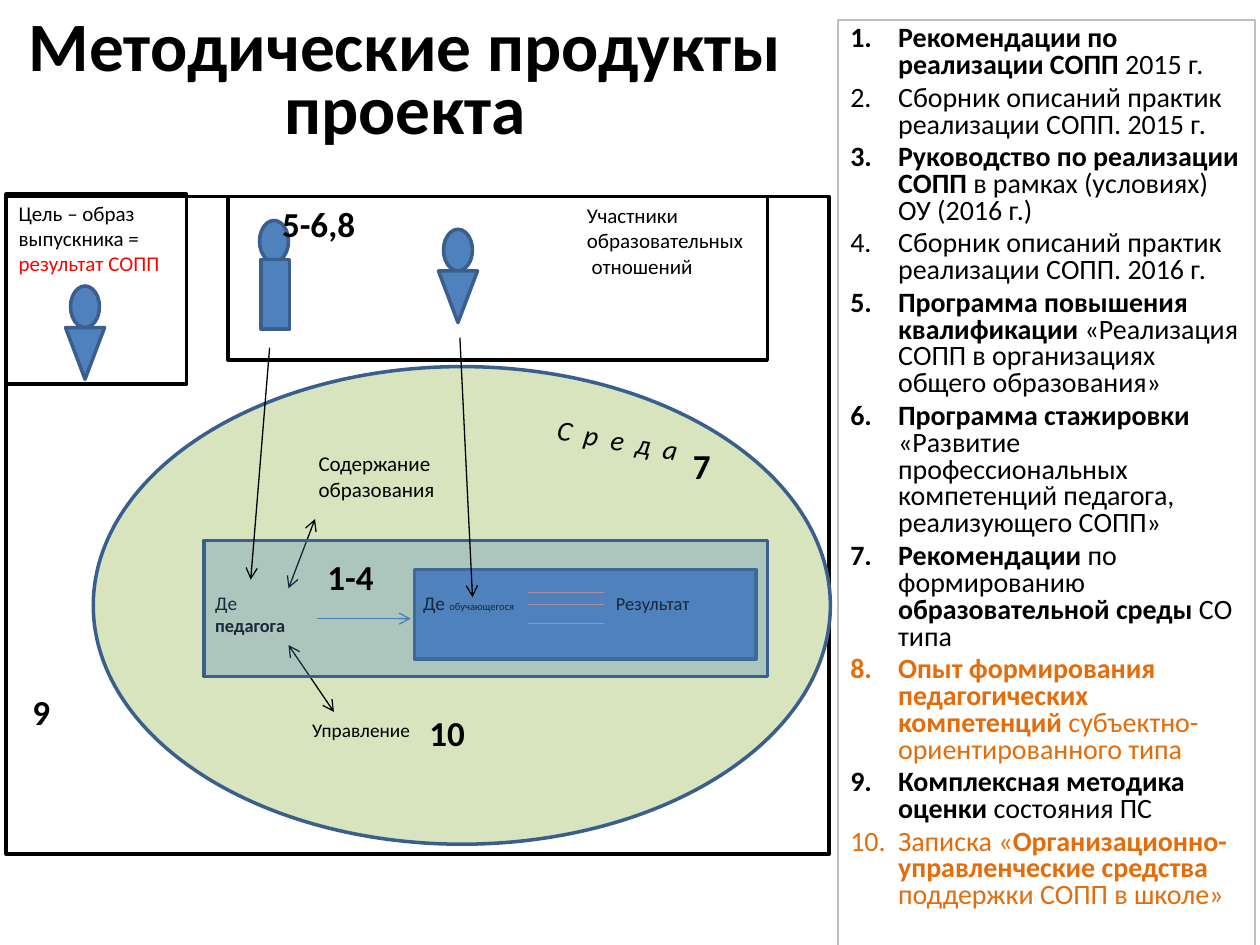
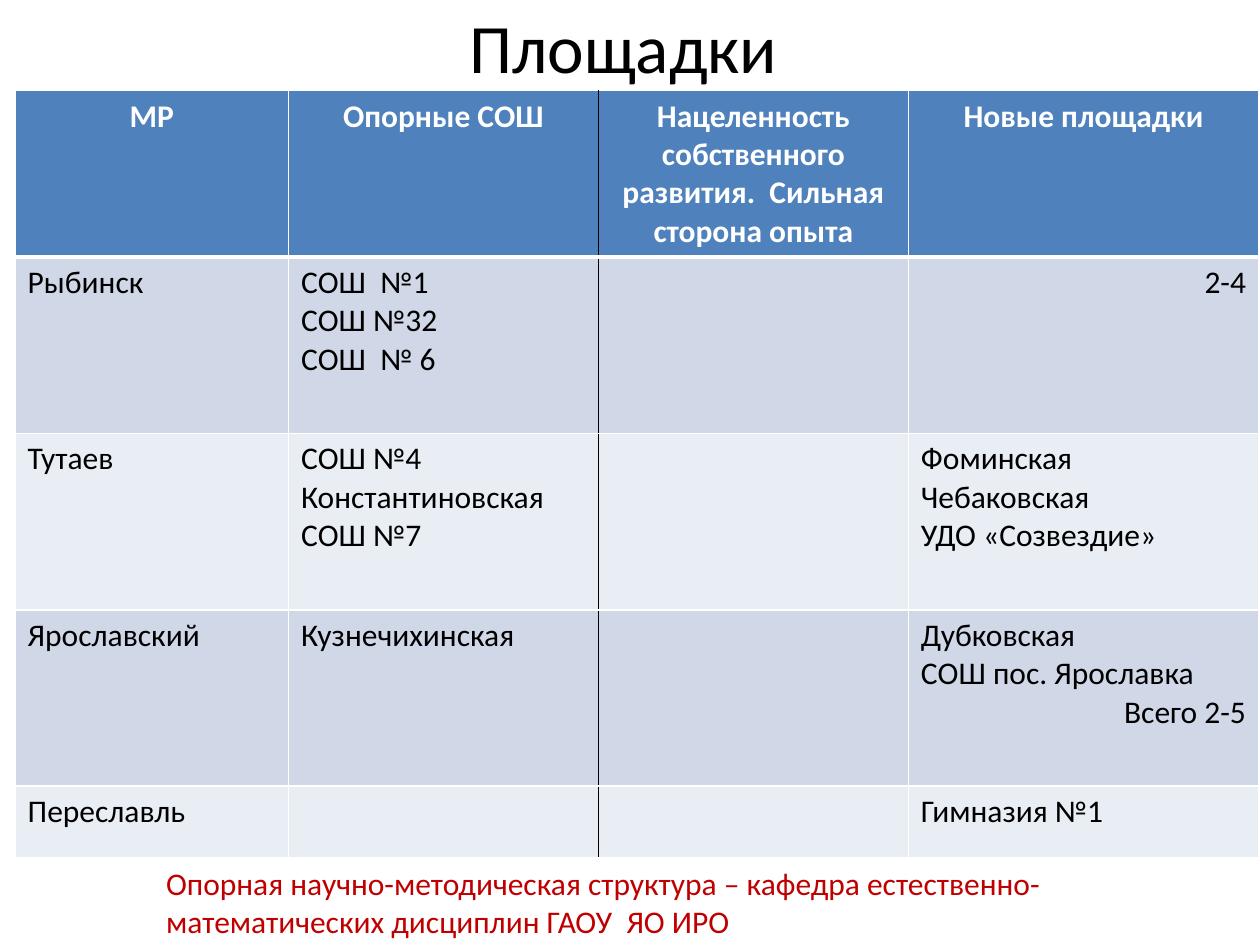
from dataclasses import dataclass

from lxml import etree
from pptx import Presentation
from pptx import util as u
from pptx.dml.color import RGBColor
from pptx.enum import shapes, text
from pptx.oxml.ns import qn

COLUMNS, ROWS = 100, 75
CELL = u.Inches(0.1)


@dataclass(frozen=True)
class Theme:
    font: str = "Calibri"
    ink: str = "000000"
    white: str = "FFFFFF"
    blue: str = "4F81BD"
    blue_edge: str = "3A5F8C"
    blue_arrow: str = "4B7EBC"
    green: str = "D7E4BD"
    pink: str = "D99694"
    red: str = "FF0000"
    dark_red: str = "C00000"
    orange: str = "E46C0A"
    pale_edge: str = "BFBFBF"
    bands: tuple = ("D0D8E8", "E9EDF4")
    title: float = 39.6
    number: float = 20
    body: float = 18
    listing: float = 16
    label: float = 12
    small: float = 11
    smaller: float = 10.5
    tiny: float = 6
    thick: float = 2
    thin: float = 0.75


T = Theme()
BOX = shapes.MSO_SHAPE.RECTANGLE
OVAL = shapes.MSO_SHAPE.OVAL
TRIANGLE = shapes.MSO_SHAPE.FLOWCHART_MERGE
LEFT, CENTER, RIGHT = text.PP_ALIGN.LEFT, text.PP_ALIGN.CENTER, text.PP_ALIGN.RIGHT

PRODUCTS = [
    "*Рекомендации по реализации СОПП *2015 г.",
    "Сборник описаний практик реализации СОПП. 2015 г.",
    "*Руководство по реализации СОПП *в рамках (условиях) ОУ (2016 г.)",
    "Сборник описаний практик реализации СОПП. 2016 г.",
    "*Программа повышения квалификации *«Реализация СОПП в организациях общего образования»",
    "*Программа стажировки *«Развитие профессиональных компетенций педагога, реализующего СОПП»",
    "*Рекомендации* по формированию *образовательной среды *СО типа",
    "*Опыт формирования педагогических компетенций *субъектно-ориентированного типа",
    "*Комплексная методика оценки* состояния ПС",
    "Записка «*Организационно-управленческие средства *поддержки СОПП в школе»",
]
HIGHLIGHTED_PRODUCTS = (8, 10)

SITES_HEADER = ["МР", "Опорные СОШ",
                "Нацеленность собственного развития.  Сильная сторона опыта", "Новые площадки"]
SITES = [
    [["Рыбинск"], ["СОШ  №1", "СОШ №32", "СОШ  № 6"], [], ["2-4"]],
    [["Тутаев"], ["СОШ №4", "Константиновская", "СОШ №7"], [],
     ["Фоминская", "Чебаковская", "УДО «Созвездие»"]],
    [["Ярославский"], ["Кузнечихинская"], [],
     ["Дубковская", "СОШ пос. Ярославка", "Всего 2-5"]],
    [["Переславль"], [], [], ["Гимназия №1"]],
]
RIGHT_ALIGNED = ("2-4", "Всего 2-5")


def grid(*cells):
    """Turn grid columns and rows into slide lengths."""
    return [u.Emu(round(cell * CELL)) for cell in cells]


def style(font, size=None, color=None, bold=None, italic=None):
    if size:
        font.size = u.Pt(size)
    if color:
        font.color.rgb = RGBColor.from_string(color)
    if bold is not None:
        font.bold = bold
    if italic is not None:
        font.italic = italic


def write(frame, lines, size, color=T.ink, bold=False, italic=False, align=LEFT):
    """Write one paragraph per line; a line is a string or a list of (words, run style)."""
    paragraphs = []
    for i, line in enumerate(lines):
        paragraph = frame.add_paragraph() if i else frame.paragraphs[0]
        paragraph.alignment = align
        paragraph.font.name = T.font
        style(paragraph.font, size, color, bold, italic)
        for words, changes in [(line, {})] if isinstance(line, str) else line:
            run = paragraph.add_run()
            run.text = words
            style(run.font, **changes)
        paragraphs.append(paragraph)
    return paragraphs


def bold_marks(line):
    """Split a line at asterisks; every second piece is bold."""
    return [(words, {"bold": i % 2 == 1}) for i, words in enumerate(line.split("*")) if words]


def label(slide, at, lines, size, wrap=True, **looks):
    box = slide.shapes.add_textbox(*grid(*at))
    box.text_frame.word_wrap = wrap
    write(box.text_frame, lines, size, **looks)
    return box


def title(slide, at, words, bold=False, spacing=1.0):
    box = label(slide, at, [words], T.title, bold=bold, align=CENTER)
    box.text_frame.vertical_anchor = text.MSO_ANCHOR.MIDDLE
    box.text_frame.paragraphs[0].line_spacing = spacing


def figure(slide, kind, at, fill=None, edge=T.ink, width=T.thick, alpha=None):
    shape = slide.shapes.add_shape(kind, *grid(*at))
    shape.shadow.inherit = False
    shape.line.color.rgb = RGBColor.from_string(edge)
    shape.line.width = u.Pt(width)
    shape.text_frame.vertical_anchor = text.MSO_ANCHOR.TOP
    if fill:
        shape.fill.solid()
        shape.fill.fore_color.rgb = RGBColor.from_string(fill)
    else:
        shape.fill.background()
    if alpha:
        tint = shape.fill._xPr.find(f"{qn('a:solidFill')}/{qn('a:srgbClr')}")
        etree.SubElement(tint, qn("a:alpha"), val=str(alpha * 1000))
    return shape


def blue(slide, kind, at, alpha=None):
    return figure(slide, kind, at, T.blue, T.blue_edge, alpha=alpha)


def person(slide, left, top, is_teacher=False):
    blue(slide, OVAL, (left, top, 2.3, 3.3))
    if is_teacher:
        blue(slide, BOX, (left + 0.1, top + 3.1, 2.3, 5.5))
    else:
        blue(slide, TRIANGLE, (left - 0.4, top + 3.3, 3.1, 4.1))


def link(slide, start, end, color=T.ink, arrows=()):
    """Draw a straight line; arrows names its pointed ends: headEnd, tailEnd."""
    line = slide.shapes.add_connector(shapes.MSO_CONNECTOR.STRAIGHT, *grid(*start, *end))
    line.line.color.rgb = RGBColor.from_string(color)
    line.line.width = u.Pt(T.thin)
    for tip in arrows:
        etree.SubElement(line.line._get_or_add_ln(), qn(f"a:{tip}"), type="arrow")
    etree.SubElement(line._element.spPr, qn("a:effectLst"))


def border(cell, side, color, width):
    edge = etree.SubElement(cell._tc.get_or_add_tcPr(), qn(f"a:ln{side}"),
                            w=str(u.Pt(width)))
    fill = etree.SubElement(edge, qn("a:solidFill"))
    etree.SubElement(fill, qn("a:srgbClr"), val=color)


def environment(slide):
    """Draw the goal, the environment and the activities inside it."""
    goal = figure(slide, BOX, (0.5, 15.4, 14.3, 15.1), T.white)
    goal.text_frame.word_wrap = True
    write(goal.text_frame,
          [[("Цель – образ выпускника = ", {}), ("результат СОПП", {"color": T.red})]], T.label)
    person(slide, 5.6, 22.7)
    figure(slide, BOX, (0.5, 15.6, 65.3, 52.2))
    figure(slide, OVAL, (7.4, 29.1, 58.5, 37.9), T.green, T.blue_edge)

    label(slide, (24.3, 35.3, 11.9, 6.7), ["Содержание образования"], T.label)
    label(slide, (23.8, 56.5, 10.7, 3.5), ["Управление"], T.small)
    medium = label(slide, (43.2, 33.3, 14.4, 3.6), ["С р е д а"], T.listing, italic=True)
    medium.rotation = 10.3
    medium.text_frame.paragraphs[0].runs[0]._r.get_or_add_rPr().set("spc", "180")

    both_ends = ("headEnd", "tailEnd")
    link(slide, (25, 41.2), (22.9, 46.7), arrows=both_ends)
    link(slide, (22.9, 51.2), (26.5, 56.5), arrows=both_ends)
    label(slide, (16.1, 46.4, 9.1, 6.2),
          [[("Де ", {}), ("педагога", {"size": T.smaller, "bold": True})]], T.small)
    link(slide, (25.2, 49.1), (32.6, 49.1), T.blue_arrow, ["tailEnd"])

    blue(slide, BOX, (32.9, 45.2, 27.1, 7.1))
    label(slide, (32.6, 46.4, 10.6, 5.7),
          [[("Де ", {}), ("обучающегося", {"size": T.tiny})]], T.small)
    label(slide, (47.9, 46.5, 12, 3.1), ["Результат"], T.smaller)
    for row in (47, 48, 49.5):
        link(slide, (41.9, row), (47.9, row), T.pink)
    blue(slide, BOX, (16.2, 42.9, 44.7, 10.8), alpha=31)


def participants(slide):
    link(slide, (21.4, 27.6), (19.9, 46), arrows=["tailEnd"])
    link(slide, (36.5, 26.8), (37.5, 47.4), arrows=["tailEnd"])
    person(slide, 35.2, 18.2)
    person(slide, 20.6, 17.5, is_teacher=True)
    figure(slide, BOX, (18.1, 15.6, 42.8, 13))
    label(slide, (45.6, 15.6, 16.5, 8.2),
          ["Участники образовательных", " отношений"], T.label)


def product_list(slide):
    panel = figure(slide, BOX, (66.5, 1.6, 33.1, 75.3), edge=T.pale_edge, width=T.thin)
    panel.text_frame.word_wrap = True
    paragraphs = write(panel.text_frame, map(bold_marks, PRODUCTS), T.listing)
    for number, paragraph in enumerate(paragraphs, 1):
        paragraph.line_spacing = 0.8
        paragraph.space_before = u.Pt(3.2)
        if number in HIGHLIGHTED_PRODUCTS:
            style(paragraph.font, color=T.orange)
        layout = paragraph._p.get_or_add_pPr()
        indent = u.Inches(0.38)
        layout.set("marL", str(indent))
        layout.set("indent", str(-indent))
        bullet = etree.Element(qn("a:buAutoNum"), type="arabicPeriod")
        layout.find(qn("a:defRPr")).addprevious(bullet)


def products_slide(slide):
    title(slide, (-2.1, 2.1, 68.5, 9.2), "Методические продукты проекта", True, 0.75)
    environment(slide)
    participants(slide)
    product_list(slide)
    for numbers, left, top, width in [("1-4", 25, 43.6, 5.7), ("5-6,8", 21.4, 15.6, 7.9),
                                      ("7", 54, 34.8, 3.4), ("9", 1.6, 54.3, 3.4),
                                      ("10", 33.1, 56, 4.9)]:
        label(slide, (left, top, width, 4.4), [numbers], T.number, wrap=False, bold=True)


def sites_table(slide):
    widths, heights = (21.7, 24.6, 24.6, 27.8), (13.2, 14, 14, 14, 5.7)
    table = slide.shapes.add_table(len(heights), len(widths),
                                   *grid(1.2, 7.2, sum(widths), sum(heights))).table
    for column, width in zip(table.columns, grid(*widths)):
        column.width = width
    for row, height in zip(table.rows, grid(*heights)):
        row.height = height

    for r, row in enumerate([[[name] for name in SITES_HEADER]] + SITES):
        for c, lines in enumerate(row):
            cell = table.cell(r, c)
            border(cell, "L", T.ink if c == 2 else T.white, 1)
            border(cell, "R", T.ink if c == 1 else T.white, 1)
            border(cell, "T", T.white, 3 if r == 1 else 1)
            border(cell, "B", T.white, 1 if r else 3)
            cell.fill.solid()
            cell.fill.fore_color.rgb = RGBColor.from_string(T.bands[(r - 1) % 2] if r else T.blue)
            paragraphs = write(cell.text_frame, lines, T.body, T.ink if r else T.white,
                               bold=r == 0, align=LEFT if r else CENTER)
            for paragraph in paragraphs:
                if paragraph.text in RIGHT_ALIGNED:
                    paragraph.alignment = RIGHT


def sites_slide(slide):
    title(slide, (5.1, 0.2, 90, 6.9), "Площадки ")
    sites_table(slide)
    label(slide, (12.2, 68.1, 84.3, 7.1),
          ["Опорная научно-методическая структура – кафедра "
           "естественно-математических дисциплин ГАОУ  ЯО ИРО"], T.body, color=T.dark_red)


def main():
    deck = Presentation()
    deck.slide_width, deck.slide_height = COLUMNS * CELL, ROWS * CELL
    blank = deck.slide_layouts[6]
    for build in (products_slide, sites_slide):
        build(deck.slides.add_slide(blank))
    deck.save("out.pptx")


if __name__ == "__main__":
    main()
